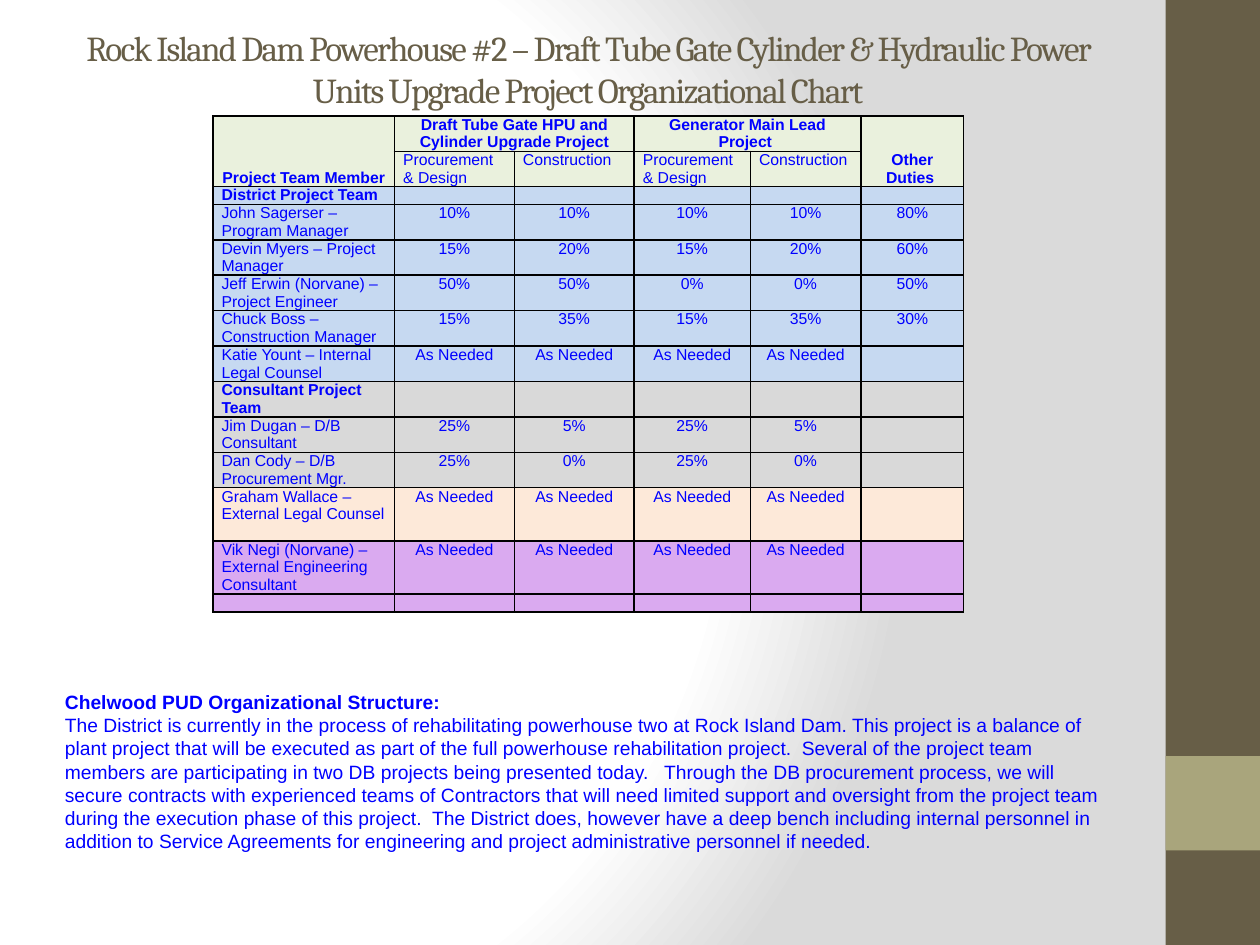
from pptx import Presentation
from pptx.dml.color import RGBColor
from pptx.enum import shapes, text
from pptx.oxml import parse_xml
from pptx.oxml.ns import nsdecls
from pptx.util import Pt

BLUE, BROWN, OLIVE = "0000FF", "675E47", "A9A57C"
GREEN, SKY, GRAY, PEACH, VIOLET = "EAF1DD", "C6D9F1", "D9D9D9", "FDE9D9", "DAAAF0"
CENTER, LEFT = text.PP_ALIGN.CENTER, text.PP_ALIGN.LEFT
TITLE = ("Rock Island Dam Powerhouse #2 – Draft Tube Gate Cylinder & Hydraulic Power "
         "Units Upgrade Project Organizational Chart")
HEADING = "Chelwood PUD Organizational Structure:"
BODY = (
    "The District is currently in the process of rehabilitating powerhouse two at Rock Island Dam. "
    "This project is a balance of plant project that will be executed as part of the full powerhouse "
    "rehabilitation project.  Several of the project team members are participating in two DB projects "
    "being presented today.   Through the DB procurement process, we will secure contracts with "
    "experienced teams of Contractors that will need limited support and oversight from the project "
    "team during the execution phase of this project.  The District does, however have a deep bench "
    "including internal personnel in addition to Service Agreements for engineering and project "
    "administrative personnel if needed.")
COLUMN_WIDTHS = [103.8, 68.5, 68.5, 66.4, 63.2, 58.8]
LINE_HEIGHT = 10.13
AS_NEEDED = ["As Needed"] * 4
HEADERS = [
    ["Project Team Member", "Draft Tube Gate HPU and Cylinder Upgrade Project", "",
     "Generator Main Lead Project ", "", "Other Duties "],
    ["", *["Procurement & Design", "Construction"] * 2, ""],
]
MERGES = [((0, 0), (1, 0)), ((0, 1), (0, 2)), ((0, 3), (0, 4)), ((0, 5), (1, 5))]
MEMBERS = [
    (SKY, 1, "District Project Team", []),
    (SKY, 2, "John Sagerser – Program Manager", ["10%", "10%", "10%", "10%", "80%"]),
    (SKY, 2, "Devin Myers – Project Manager", ["15%", "20%", "15%", "20%", "60%"]),
    (SKY, 2, "Jeff Erwin (Norvane) – Project Engineer", ["50%", "50%", "0%", "0%", "50%"]),
    (SKY, 2, "Chuck Boss – Construction Manager", ["15%", "35%", "15%", "35%", "30%"]),
    (SKY, 2, "Katie Yount – Internal Legal Counsel", AS_NEEDED),
    (GRAY, 2, "Consultant Project Team", []),
    (GRAY, 2, "Jim Dugan – D/B Consultant", ["25%", "5%", "25%", "5%"]),
    (GRAY, 2, "Dan Cody – D/B Procurement Mgr.", ["25%", "0%", "25%", "0%"]),
    (PEACH, 3, "Graham Wallace – External Legal Counsel", AS_NEEDED),
    (VIOLET, 3, "Vik Negi (Norvane) – External Engineering Consultant", AS_NEEDED),
    (VIOLET, 1, "", []),
]


def rgb(color):
    return RGBColor.from_string(color)


def place(shape, left, top, width, height):
    shape.left, shape.top, shape.width, shape.height = map(Pt, (left, top, width, height))


def write(paragraph, words, size, color, font="Arial", bold=False, align=LEFT):
    paragraph.text = words
    paragraph.alignment = align
    paragraph.font.name = font
    paragraph.font.size = Pt(size)
    paragraph.font.bold = bold
    paragraph.font.color.rgb = rgb(color)


def set_background(slide):
    stops = "".join(f'<a:gs pos="{position}000"><a:srgbClr val="{color}"/></a:gs>'
                    for position, color in [(0, "FFFFFF"), (75, "FFFFFF"), (100, "DADADA")])
    slide._element.cSld.insert(0, parse_xml(
        f'<p:bg {nsdecls("p", "a")}><p:bgPr><a:gradFill rotWithShape="1"><a:gsLst>{stops}</a:gsLst>'
        '<a:path path="circle"><a:fillToRect l="20000" t="50000" r="100000" b="50000"/></a:path>'
        '</a:gradFill><a:effectLst/></p:bgPr></p:bg>'))


def add_block(slide, left, top, width, height, color):
    shape = slide.shapes.add_shape(
        shapes.MSO_SHAPE.RECTANGLE, Pt(left), Pt(top), Pt(width), Pt(height))
    shape.shadow.inherit = False
    shape.fill.solid()
    shape.fill.fore_color.rgb = rgb(color)
    shape.line.fill.background()


def set_title(slide):
    title = slide.shapes.title
    place(title, 30, 12, 612, 54)
    frame = title.text_frame
    frame.word_wrap = True
    frame.auto_size = text.MSO_AUTO_SIZE.NONE
    frame.vertical_anchor = text.MSO_ANCHOR.MIDDLE
    paragraph = frame.paragraphs[0]
    write(paragraph, TITLE, 20, BROWN, "Cambria", align=CENTER)
    paragraph.runs[0]._r.get_or_add_rPr().set("spc", "-100")


def format_cell(cell, words, color, bold, align, anchor):
    cell.margin_left = cell.margin_right = Pt(5)
    cell.margin_top = cell.margin_bottom = 0
    cell.vertical_anchor = anchor
    cell.fill.solid()
    cell.fill.fore_color.rgb = rgb(color)
    write(cell.text_frame.paragraphs[0], words, 9, BLUE, bold=bold, align=align)
    properties = cell._tc.get_or_add_tcPr()
    for index, side in enumerate("LRTB"):
        properties.insert(index, parse_xml(
            f'<a:ln{side} {nsdecls("a")} w="12700"><a:solidFill><a:srgbClr val="000000"/>'
            f'</a:solidFill></a:ln{side}>'))


def add_team_table(slide):
    rows = [(GREEN, 2, header) for header in HEADERS]
    rows += [(color, lines, [name, *values, *[""] * (5 - len(values))])
             for color, lines, name, values in MEMBERS]
    heights = [lines * LINE_HEIGHT for _, lines, _ in rows]
    table = slide.shapes.add_table(
        len(rows), len(COLUMN_WIDTHS), Pt(121.6), Pt(66.2),
        Pt(sum(COLUMN_WIDTHS)), Pt(sum(heights))).table
    table.first_row = table.horz_banding = False
    for column, width in zip(table.columns, COLUMN_WIDTHS):
        column.width = Pt(width)
    for row_index, (color, _, words) in enumerate(rows):
        table.rows[row_index].height = Pt(heights[row_index])
        for column_index, word in enumerate(words):
            top_header = row_index == 0
            group = word.endswith("Project Team")
            centered = top_header or (row_index > 1 and column_index > 0)
            format_cell(table.cell(row_index, column_index), word, color, top_header or group,
                        CENTER if centered else LEFT,
                        text.MSO_ANCHOR.BOTTOM if top_header else text.MSO_ANCHOR.TOP)
    for start, end in MERGES:
        table.cell(*start).merge(table.cell(*end))


def add_description(slide):
    frame = slide.shapes.add_textbox(Pt(30), Pt(391), Pt(612), Pt(122.4)).text_frame
    frame.word_wrap = True
    write(frame.paragraphs[0], HEADING, 11, BLUE, bold=True)
    write(frame.add_paragraph(), BODY, 11, BLUE)


def main():
    presentation = Presentation()
    presentation.slide_width, presentation.slide_height = Pt(720), Pt(540)
    slide = presentation.slides.add_slide(presentation.slide_layouts[5])
    set_background(slide)
    add_block(slide, 666, 0, 54, 540, BROWN)
    add_block(slide, 666, 432, 54, 54, OLIVE)
    set_title(slide)
    add_team_table(slide)
    add_description(slide)
    presentation.save("out.pptx")


if __name__ == "__main__":
    main()
